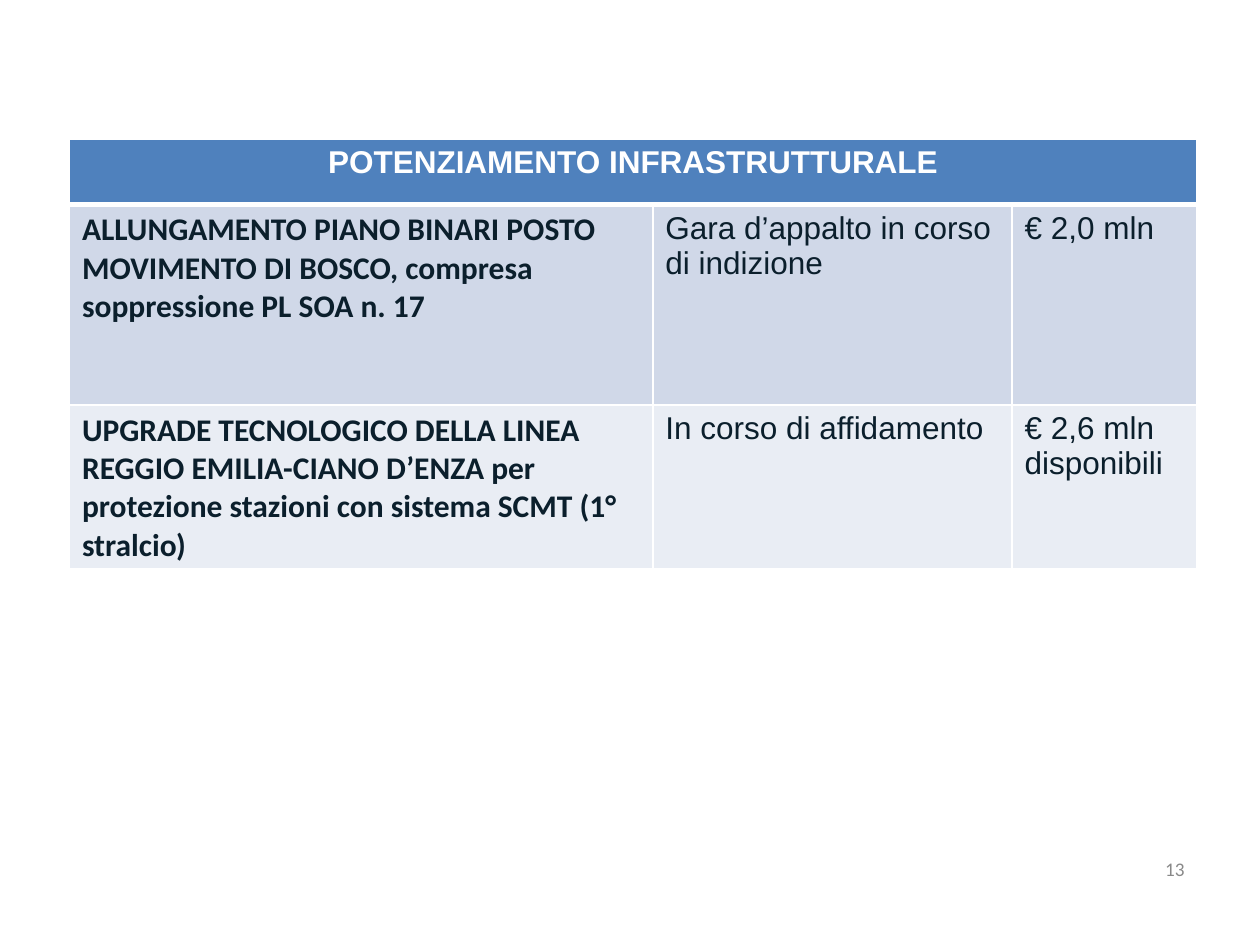
from lxml import etree
from pptx import Presentation
from pptx.dml.color import RGBColor
from pptx.enum.text import MSO_ANCHOR, PP_ALIGN
from pptx.oxml.ns import qn
from pptx.util import Cm, Pt

CENTER, RIGHT = PP_ALIGN.CENTER, PP_ALIGN.RIGHT
MIDDLE = MSO_ANCHOR.MIDDLE

WHITE = RGBColor(0xFF, 0xFF, 0xFF)
HEADER_BLUE = RGBColor(0x4F, 0x81, 0xBD)
INK = RGBColor(0x0B, 0x1F, 0x2C)
NUMBER_GREY = RGBColor(0x89, 0x89, 0x89)
ROW_FILLS = (RGBColor(0xD0, 0xD8, 0xE8), RGBColor(0xE9, 0xED, 0xF4))

COLUMN_WIDTHS = (11.76, 7.24, 3.73)
ROW_HEIGHTS = (1.32, 4.04, 3.12)
HEADING = "POTENZIAMENTO INFRASTRUTTURALE"
PROJECTS = (
    (
        "ALLUNGAMENTO PIANO BINARI POSTO MOVIMENTO DI BOSCO, compresa soppressione PL SOA n. 17",
        "Gara d’appalto in corso di indizione",
        "€ 2,0 mln",
    ),
    (
        "UPGRADE TECNOLOGICO DELLA LINEA REGGIO EMILIA-CIANO D’ENZA per protezione stazioni "
        "con sistema SCMT (1° stralcio)",
        "In corso di affidamento",
        "€ 2,6 mln disponibili",
    ),
)


def write_text(tf, text, font, size, color, bold=False, align=None):
    """Set one formatted paragraph in a text frame."""
    tf.text = text
    p = tf.paragraphs[0]
    p.alignment = align
    r = p.runs[0]
    r.font.name = font
    r.font.size = Pt(size)
    r.font.bold = bold
    r.font.color.rgb = color


def style_cell(cell, fill, bottom_width=1):
    """Give a cell white borders and a solid fill."""
    tc_pr = cell._tc.get_or_add_tcPr()
    widths = {"a:lnL": 1, "a:lnR": 1, "a:lnT": 1, "a:lnB": bottom_width}
    for tag, width in widths.items():
        line = etree.SubElement(tc_pr, qn(tag), w=str(Pt(width)))
        solid = etree.SubElement(line, qn("a:solidFill"))
        etree.SubElement(solid, qn("a:srgbClr"), val=str(WHITE))
    cell.fill.solid()
    cell.fill.fore_color.rgb = fill


def add_project_table(s):
    """Add the table of infrastructure projects."""
    table = s.shapes.add_table(
        len(ROW_HEIGHTS), len(COLUMN_WIDTHS), Cm(1.4), Cm(2.8),
        Cm(sum(COLUMN_WIDTHS)), Cm(sum(ROW_HEIGHTS)),
    ).table
    for column, width in zip(table.columns, COLUMN_WIDTHS):
        column.width = Cm(width)
    for row, height in zip(table.rows, ROW_HEIGHTS):
        row.height = Cm(height)

    for cell in table.rows[0].cells:
        style_cell(cell, HEADER_BLUE, bottom_width=3)
    heading = table.cell(0, 0)
    heading.merge(table.cell(0, len(COLUMN_WIDTHS) - 1))
    write_text(heading.text_frame, HEADING, "Arial", 18, WHITE, True, CENTER)

    for i, (project, fill) in enumerate(zip(PROJECTS, ROW_FILLS), start=1):
        for j, text in enumerate(project):
            cell = table.cell(i, j)
            style_cell(cell, fill)
            is_name = j == 0
            font = "Calibri" if is_name else "Arial"
            write_text(cell.text_frame, text, font, 18, INK, is_name)


def add_page_number(s, number):
    """Add the page number at the bottom right."""
    tf = s.shapes.add_textbox(Cm(18.2), Cm(16.9), Cm(5.93), Cm(1.24)).text_frame
    tf.word_wrap = True
    tf.vertical_anchor = MIDDLE
    write_text(tf, number, "Calibri", 11, NUMBER_GREY, align=RIGHT)


def main():
    """Build and save the slide."""
    prs = Presentation()
    prs.slide_width, prs.slide_height = Cm(25.4), Cm(19.05)
    s = prs.slides.add_slide(prs.slide_layouts[6])
    add_page_number(s, "13")
    add_project_table(s)
    prs.save("out.pptx")


if __name__ == "__main__":
    main()
